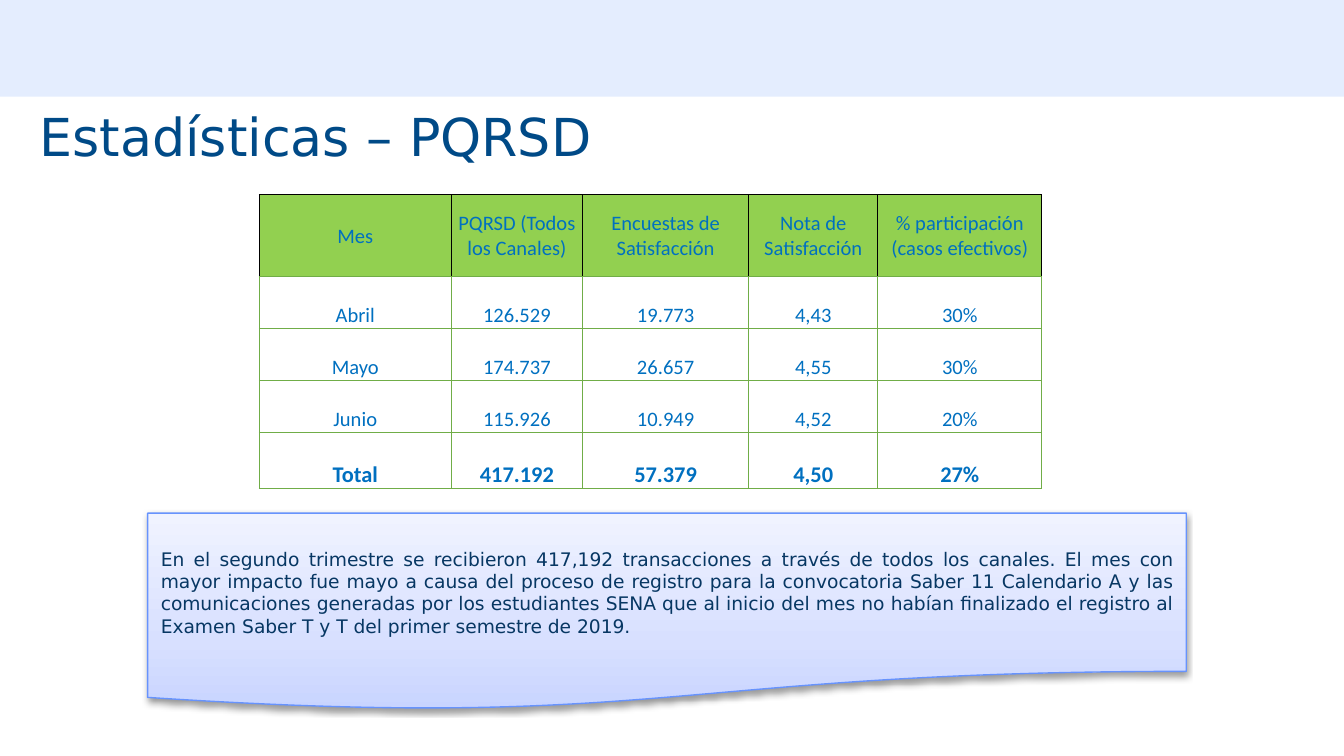
from lxml.etree import SubElement
from pptx import Presentation
from pptx.dml.color import RGBColor
from pptx.enum.shapes import MSO_SHAPE as SHAPE
from pptx.enum.text import MSO_ANCHOR as ANCHOR, PP_ALIGN as ALIGN
from pptx.oxml.ns import qn
from pptx.util import Cm, Pt

COLORS = {
    "band": "E4EDFE", "title": "004A87", "note": "073763", "note_line": "6793FD",
    "cell": "0070C0", "header": "92D050", "grid": "70AD47", "black": "000000",
}
STOPS = [(0, "C8D4FF"), (35, "D8E0FF"), (100, "F0F3FF")]


def rgb(name):
    return RGBColor.from_string(COLORS[name])


def write(tf, text, size, color, font="DejaVu Sans", align=ALIGN.LEFT, bold=False):
    p = tf.paragraphs[0]
    p.alignment = align
    r = p.add_run()
    r.text = text
    r.font.size = Pt(size)
    r.font.name = font
    r.font.bold = bold
    r.font.color.rgb = rgb(color)
    return p


prs = Presentation()
prs.slide_width, prs.slide_height = Cm(25.4), Cm(14.29)
slide = prs.slides.add_slide(prs.slide_layouts[5])

band = slide.shapes.add_shape(SHAPE.RECTANGLE, 0, 0, prs.slide_width, Cm(1.83))
band.shadow.inherit = False
band.fill.solid()
band.fill.fore_color.rgb = rgb("band")
band.line.fill.background()

title = slide.shapes.title
title.left, title.top, title.width, title.height = Cm(0.56), Cm(1.96), Cm(22.86), Cm(1.37)
tf = title.text_frame
tf.vertical_anchor = ANCHOR.MIDDLE
tf.margin_left = tf.margin_right = Cm(0.19)
tf.margin_top = tf.margin_bottom = Cm(0.1)
write(tf, "Estadísticas – PQRSD", 28, "title").line_spacing = 0.9

note = slide.shapes.add_shape(SHAPE.FLOWCHART_DOCUMENT, Cm(2.79), Cm(9.7), Cm(19.63), Cm(3.73))
note.fill.gradient()
note.fill.gradient_angle = 90
stops = note._element.spPr.find(".//" + qn("a:gsLst"))
for gs in list(stops):
    stops.remove(gs)
for pos, color in STOPS:
    gs = SubElement(stops, qn("a:gs"), pos=str(pos * 1000))
    SubElement(gs, qn("a:srgbClr"), val=color)
note.line.color.rgb = rgb("note_line")
note.line.width = Pt(0.75)
note.shadow.inherit = False
effects = note._element.spPr.find(qn("a:effectLst"))
shadow = SubElement(effects, qn("a:outerShdw"), blurRad=str(Pt(3.1)), dist=str(Pt(1.6)),
                    dir="5400000", rotWithShape="0")
shade = SubElement(shadow, qn("a:srgbClr"), val=COLORS["black"])
SubElement(shade, qn("a:alpha"), val="38000")
tf = note.text_frame
tf.word_wrap = True
tf.vertical_anchor = ANCHOR.MIDDLE
write(tf, "En el segundo trimestre se recibieron 417,192 transacciones a través de todos los "
      "canales. El mes con mayor impacto fue mayo a causa del proceso de registro para la "
      "convocatoria Saber 11 Calendario A y las comunicaciones generadas por los estudiantes "
      "SENA que al inicio del mes no habían finalizado el registro al Examen Saber T y T del "
      "primer semestre de 2019.", 10, "note", align=ALIGN.JUSTIFY)

rows = [
    ["Mes", "PQRSD (Todos los Canales)", "Encuestas de Satisfacción", "Nota de Satisfacción",
     "% participación (casos efectivos)"],
    ["Abril", "126.529", "19.773", "4,43", "30%"],
    ["Mayo", "174.737", "26.657", "4,55", "30%"],
    ["Junio", "115.926", "10.949", "4,52", "20%"],
    ["Total", "417.192", "57.379", "4,50", "27%"],
]
widths = [3.63, 2.48, 3.14, 2.44, 3.1]
heights = [1.55, 0.98, 0.98, 0.98, 1.06]
table = slide.shapes.add_table(len(rows), len(widths), Cm(4.9), Cm(3.68),
                               Cm(sum(widths)), Cm(sum(heights))).table
table.first_row = table.horz_banding = False
for col, width in zip(table.columns, widths):
    col.width = Cm(width)
for i, (row, height) in enumerate(zip(rows, heights)):
    table.rows[i].height = Cm(height)
    header, total = i == 0, i == len(rows) - 1
    for j, text in enumerate(row):
        cell = table.cell(i, j)
        cell.margin_left = cell.margin_right = cell.margin_top = Cm(0.02)
        cell.margin_bottom = 0
        cell.vertical_anchor = ANCHOR.MIDDLE if header else ANCHOR.BOTTOM
        write(cell.text_frame, text, 12 if total else 11, "cell", "Calibri", ALIGN.CENTER, total)
        for side in "LRTB":
            ln = SubElement(cell._tc.get_or_add_tcPr(), qn("a:ln" + side), w=str(Pt(0.5)))
            fill = SubElement(ln, qn("a:solidFill"))
            color = "black" if header and side != "B" else "grid"
            SubElement(fill, qn("a:srgbClr"), val=COLORS[color])
        if header:
            cell.fill.solid()
            cell.fill.fore_color.rgb = rgb("header")
        else:
            cell.fill.background()

prs.save("out.pptx")
